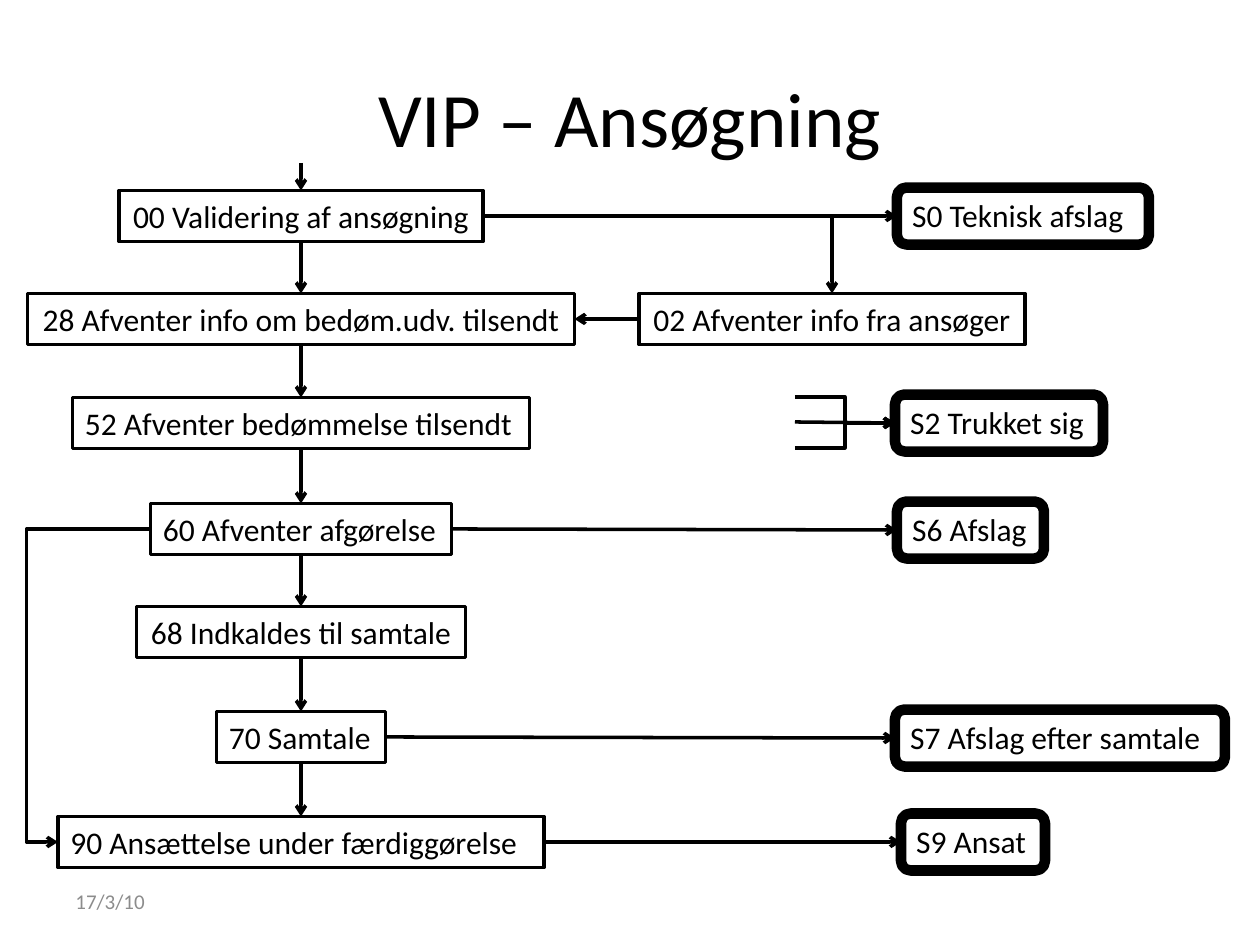
import pptx
import pptx.util
import pptx.dml.color
import pptx.enum.shapes
import pptx.enum.text
import pptx.oxml
import pptx.oxml.ns

EMU_PER_PX = 914400 / 126
COLORS = {"ink": "000000", "date": "8C8C8C"}
TOP, LEFT, BOTTOM, RIGHT = range(4)
SHAPES = pptx.enum.shapes.MSO_SHAPE
CONNECTORS = pptx.enum.shapes.MSO_CONNECTOR
ALIGN = pptx.enum.text.PP_ALIGN
ANCHOR = pptx.enum.text.MSO_ANCHOR
AUTO_SIZE = pptx.enum.text.MSO_AUTO_SIZE


def px(*lengths):
    return [pptx.util.Emu(round(length * EMU_PER_PX)) for length in lengths]


def rgb(name):
    return pptx.dml.color.RGBColor.from_string(COLORS[name])


def write(frame, text, size=18, color="ink", align=ALIGN.LEFT, anchor=ANCHOR.TOP, wrap=True):
    frame.word_wrap = wrap
    frame.vertical_anchor = anchor
    paragraph = frame.paragraphs[0]
    paragraph.alignment = align
    run = paragraph.add_run()
    run.text = text
    run.font.name = "Calibri"
    run.font.size = pptx.util.Pt(size)
    run.font.color.rgb = rgb(color)


class FlowSlide:
    thin, thick = 2, 6
    step_height, outcome_height = 51, 57

    def __init__(self, deck):
        self.slide = deck.slides.add_slide(deck.slide_layouts[5])
        self.shapes = self.slide.shapes

    def title(self, text, *box):
        heading = self.shapes.title
        heading.left, heading.top, heading.width, heading.height = px(*box)
        write(heading.text_frame, text, size=44, align=ALIGN.CENTER, anchor=ANCHOR.MIDDLE)

    def label(self, text, *box, **style):
        write(self.shapes.add_textbox(*px(*box)).text_frame, text, **style)

    def box(self, kind, weight, text, left, middle, width, height, **style):
        node = self.shapes.add_shape(kind, *px(left, middle - height / 2, width, height))
        node.shadow.inherit = False
        node.fill.background()
        node.line.color.rgb = rgb("ink")
        node.line.width = pptx.util.Pt(weight)
        write(node.text_frame, text, **style)
        node.text_frame.auto_size = AUTO_SIZE.SHAPE_TO_FIT_TEXT
        return node

    def step(self, text, center, middle, width, **style):
        return self.box(SHAPES.FLOWCHART_PROCESS, self.thin, text, center - width / 2,
                        middle, width, self.step_height, **style)

    def outcome(self, text, left, middle, width):
        return self.box(SHAPES.FLOWCHART_ALTERNATE_PROCESS, self.thick, text, left,
                        middle, width, self.outcome_height)

    def arrow(self, start, end, kind=CONNECTORS.STRAIGHT, bend=None, preset=None):
        points = [end_point if isinstance(end_point[0], int) else (0, 0)
                  for end_point in (start, end)]
        link = self.shapes.add_connector(kind, *px(*points[0], *points[1]))
        if not isinstance(start[0], int):
            link.begin_connect(*start)
        if not isinstance(end[0], int):
            link.end_connect(*end)
        link.line.color.rgb = rgb("ink")
        link.line.width = pptx.util.Pt(self.thin)
        qn = pptx.oxml.ns.qn
        properties = link._element.spPr
        geometry = properties.find(qn("a:prstGeom"))
        if preset:
            geometry.set("prst", preset)
        if bend:
            guide = geometry.get_or_add_avLst().makeelement(
                qn("a:gd"), {"name": "adj1", "fmla": f"val {bend}"})
            geometry.get_or_add_avLst().append(guide)
        outline = properties.find(qn("a:ln"))
        outline.append(outline.makeelement(qn("a:tailEnd"), {"type": "arrow"}))
        properties.append(properties.makeelement(qn("a:effectLst"), {}))


def main():
    deck = pptx.Presentation()
    deck.slide_width, deck.slide_height = px(1260, 945)
    flow = FlowSlide(deck)
    flow.title("VIP – Ansøgning", 63, 38, 1134, 157)
    flow.label("17/3/10", 63, 876, 294, 50, size=12, color="date", anchor=ANCHOR.MIDDLE)

    main_axis = 301
    step_rows = [
        ("00 Validering af ansøgning", 216, 364, ALIGN.CENTER, False),
        ("28 Afventer info om bedøm.udv. tilsendt", 319, 547, ALIGN.CENTER, False),
        ("52 Afventer bedømmelse tilsendt", 423, 457, ALIGN.LEFT, False),
        ("60 Afventer afgørelse", 529, 301, ALIGN.LEFT, False),
        ("68 Indkaldes til samtale", 632, 329, ALIGN.CENTER, False),
        ("70 Samtale", 737, 169, ALIGN.LEFT, False),
        ("90 Ansættelse under færdiggørelse", 842, 486, ALIGN.LEFT, True),
    ]
    steps = [flow.step(text, main_axis, middle, width, align=align, wrap=wrap)
             for text, middle, width, align, wrap in step_rows]
    validation, committee, _, decision, _, interview, hiring = steps
    applicant_info = flow.step("02 Afventer info fra ansøger", 832, 319, 386,
                               align=ALIGN.CENTER, wrap=False)

    rejected = flow.outcome("S0 Teknisk afslag", 897, 216, 252)
    withdrawn = flow.outcome("S2 Trukket sig", 895, 423, 208)
    declined = flow.outcome("S6 Afslag", 897, 530, 147)
    declined_late = flow.outcome("S7 Afslag efter samtale", 895, 738, 330)
    hired = flow.outcome("S9 Ansat", 901, 842, 144)

    flow.arrow((main_axis, 163), (validation, TOP))
    for upper, lower in zip(steps, steps[1:]):
        flow.arrow((upper, BOTTOM), (lower, TOP))
    for step, outcome in ((validation, rejected), (decision, declined),
                          (interview, declined_late), (hiring, hired)):
        flow.arrow((step, RIGHT), (outcome, LEFT))
    flow.arrow((applicant_info, LEFT), (committee, RIGHT))
    flow.arrow((validation, RIGHT), (applicant_info, TOP), CONNECTORS.ELBOW,
               preset="bentConnector2")
    flow.arrow((decision, LEFT), (hiring, LEFT), CONNECTORS.ELBOW, bend=134100)
    flow.arrow((795, 422), (withdrawn, LEFT))
    for source_y in (397, 448):
        flow.arrow((795, source_y), (withdrawn, LEFT), CONNECTORS.ELBOW, bend=50000)

    deck.save("out.pptx")


if __name__ == "__main__":
    main()
